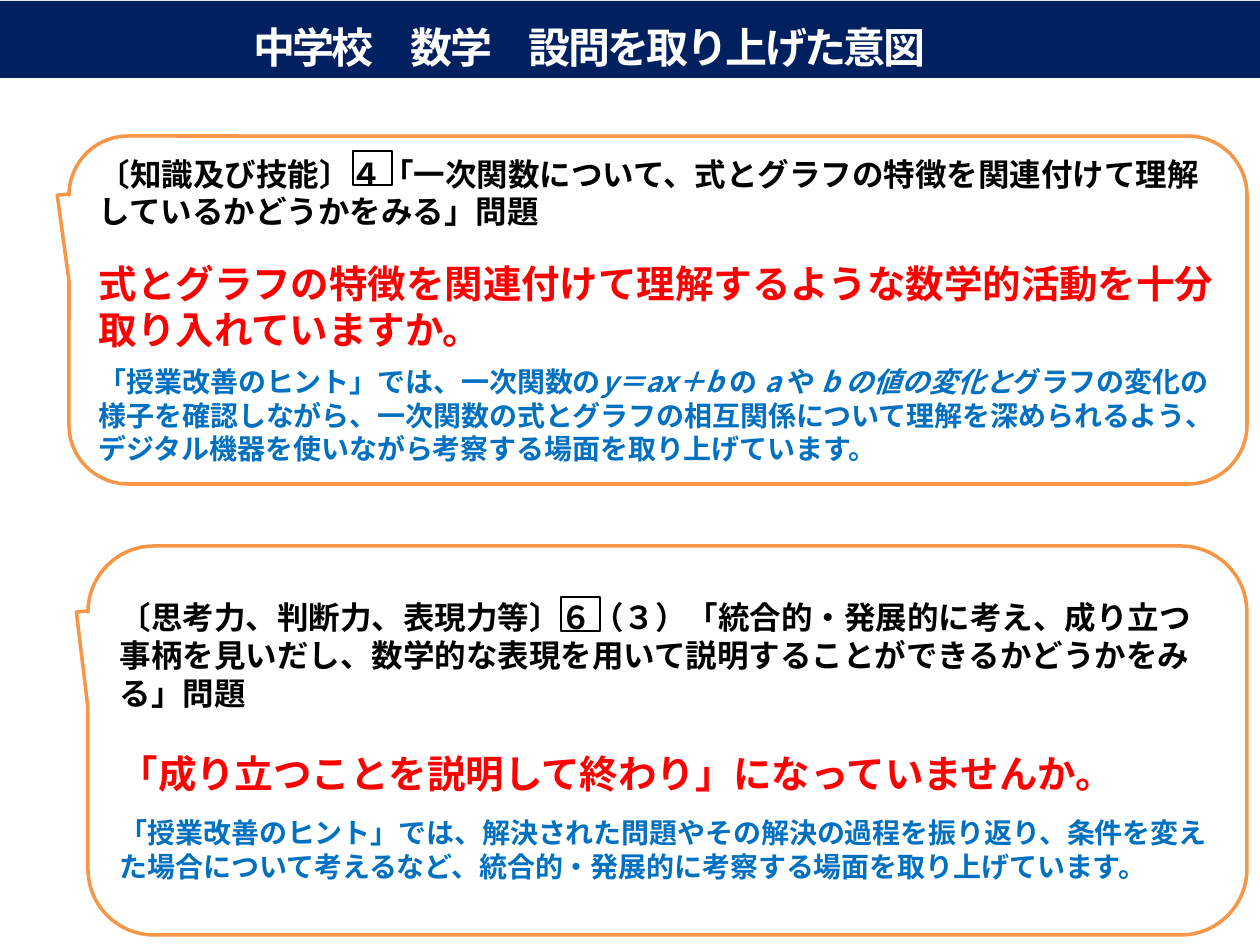
from lxml import etree
from pptx import Presentation
from pptx.dml.color import RGBColor
from pptx.enum.lang import MSO_LANGUAGE_ID
from pptx.enum.shapes import MSO_SHAPE
from pptx.enum.text import MSO_ANCHOR, MSO_AUTO_SIZE, PP_ALIGN
from pptx.oxml.ns import qn
from pptx.util import Pt

EMU_PER_PX = 914400 / 126
FONT = "Noto Sans CJK JP"
TITLE_ONLY = 5
RECTANGLE = MSO_SHAPE.RECTANGLE
CALLOUT = MSO_SHAPE.ROUNDED_RECTANGULAR_CALLOUT
MIDDLE = MSO_ANCHOR.MIDDLE
LEFT, CENTER = PP_ALIGN.LEFT, PP_ALIGN.CENTER
JAPANESE = MSO_LANGUAGE_ID.JAPANESE

NAVY = RGBColor(0x00, 0x20, 0x60)
WHITE = RGBColor(0xFF, 0xFF, 0xFF)
BLACK = RGBColor(0x00, 0x00, 0x00)
ORANGE = RGBColor(0xF7, 0x96, 0x46)
RED = RGBColor(0xFF, 0x00, 0x00)
BLUE = RGBColor(0x00, 0x70, 0xC0)

# Size and colour of the three paragraphs in each callout
PARAGRAPH_STYLES = [(18, BLACK), (22, RED), (16, BLUE)]

# Each paragraph is a list of runs; every second run is italic.
KNOWLEDGE = [
    ["〔知識及び技能〕４「一次関数について、式とグラフの特徴を関連付けて理解しているかどうかをみる」問題"],
    ["式とグラフの特徴を関連付けて理解するような数学的活動を十分取り入れていますか。"],
    ["「授業改善のヒント」では、一次関数の", "y＝ax＋b ", "の", " a", " や ", "b の値の変化と",
     "グラフの変化の様子を確認しながら、一次関数の式とグラフの相互関係について理解を深められるよう、"
     "デジタル機器を使いながら考察する場面を取り上げています。"],
]
THINKING = [
    ["〔思考力、判断力、表現力等〕６（３）「統合的・発展的に考え、成り立つ事柄を見いだし、"
     "数学的な表現を用いて説明することができるかどうかをみる」問題"],
    ["「成り立つことを説明して終わり」になっていませんか。"],
    ["「授業改善のヒント」では、解決された問題やその解決の過程を振り返り、条件を変えた場合について"
     "考えるなど、統合的・発展的に考察する場面を取り上げています。"],
]


def px(length):
    return round(length * EMU_PER_PX)


def format_run(run, size, color, italic=False):
    font = run.font
    font.size = Pt(size)
    font.bold = True
    font.italic = italic
    font.color.rgb = color
    font.language_id = JAPANESE
    font.name = FONT
    east_asian = etree.SubElement(run._r.get_or_add_rPr(), qn("a:ea"))
    east_asian.set("typeface", FONT)


def add_title(slide, text):
    title = slide.shapes.title
    title.left, title.top, title.width, title.height = map(px, (-2, 1, 1262, 77))
    title.fill.solid()
    title.fill.fore_color.rgb = NAVY
    frame = title.text_frame
    frame.text = text
    frame.auto_size = MSO_AUTO_SIZE.NONE
    frame.word_wrap = True
    frame.vertical_anchor = MIDDLE
    frame.margin_left, frame.margin_top = px(13), px(20)
    frame.margin_right, frame.margin_bottom = px(93), px(6)
    paragraph = frame.paragraphs[0]
    paragraph.alignment = CENTER
    run = paragraph.runs[0]
    format_run(run, 24, WHITE)
    run._r.get_or_add_rPr().set("spc", "-150")


def add_outlined_shape(slide, kind, box, color, width):
    shape = slide.shapes.add_shape(kind, *map(px, box))
    shape.shadow.inherit = False
    shape.line.color.rgb = color
    shape.line.width = Pt(width)
    return shape


def add_callout(slide, box, paragraphs, gaps):
    """Add a callout whose gaps are the points between its paragraphs."""
    callout = add_outlined_shape(slide, CALLOUT, box, ORANGE, 2)
    callout.fill.solid()
    callout.fill.fore_color.rgb = WHITE
    for index, value in enumerate((-0.51, -0.33, 0.17)):
        callout.adjustments[index] = value
    frame = callout.text_frame
    frame.word_wrap = True
    frame.vertical_anchor = MIDDLE
    for index, (texts, (size, color)) in enumerate(zip(paragraphs, PARAGRAPH_STYLES)):
        paragraph = frame.add_paragraph() if index else frame.paragraphs[0]
        paragraph.alignment = LEFT
        if index:
            paragraph.space_before = Pt(gaps[index - 1])
        for position, text in enumerate(texts):
            run = paragraph.add_run()
            run.text = text
            format_run(run, size, color, italic=position % 2 == 1)


def add_number_frame(slide, left, top):
    frame = add_outlined_shape(slide, RECTANGLE, (left, top, 39, 34), BLACK, 1.5)
    frame.fill.background()


def main():
    presentation = Presentation()
    presentation.slide_width, presentation.slide_height = px(1260), px(945)
    slide = presentation.slides.add_slide(presentation.slide_layouts[TITLE_ONLY])
    add_title(slide, "中学校　数学　設問を取り上げた意図")
    add_callout(slide, (69, 136, 1178, 348), KNOWLEDGE, (17, 7))
    add_callout(slide, (88, 546, 1159, 389), THINKING, (22, 11))
    add_number_frame(slide, 353, 151)
    add_number_frame(slide, 561, 597)
    presentation.save("out.pptx")


if __name__ == "__main__":
    main()
